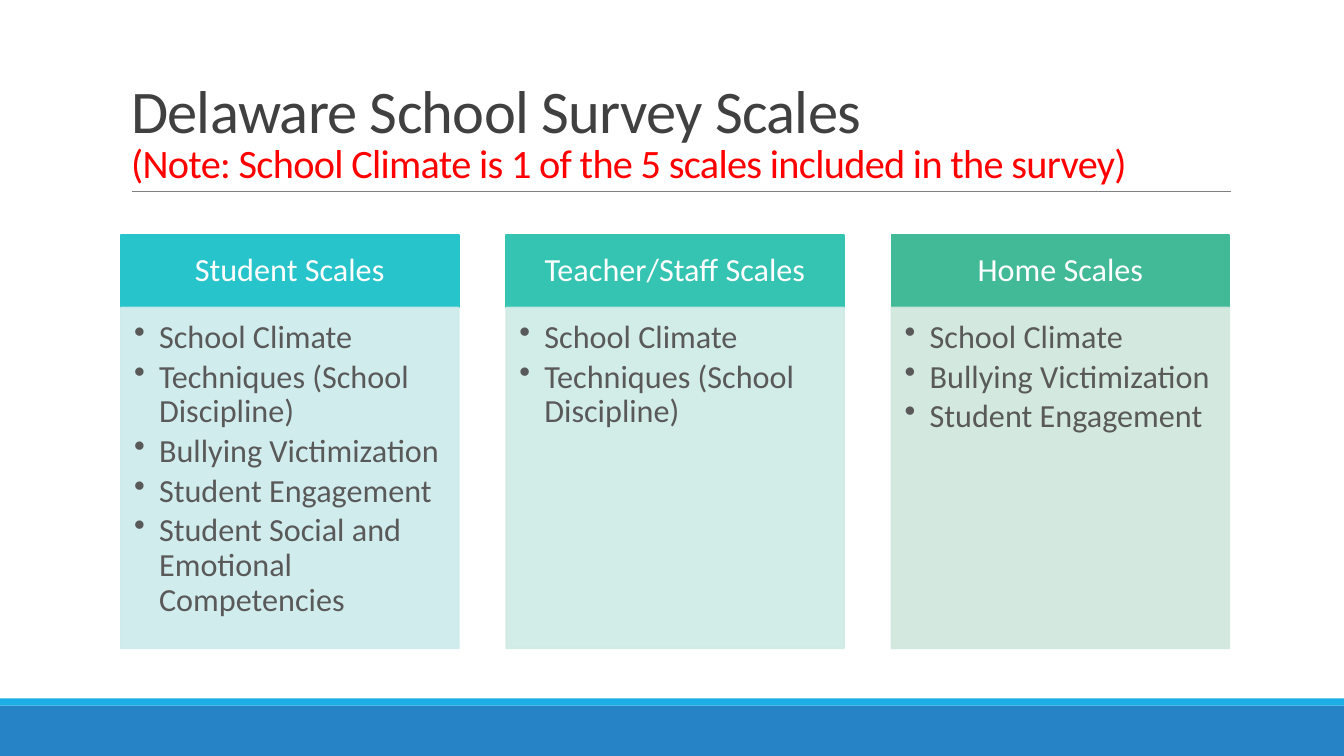
from lxml.etree import SubElement
from pptx import Presentation
from pptx.dml.color import RGBColor
from pptx.enum.shapes import MSO_CONNECTOR as CONN, MSO_SHAPE as SHAPE
from pptx.enum.text import MSO_ANCHOR as ANCHOR, MSO_AUTO_SIZE as FIT, PP_ALIGN as ALIGN
from pptx.oxml.ns import qn
from pptx.util import Cm, Pt

WHITE = RGBColor(0xFF, 0xFF, 0xFF)
DARK = RGBColor(0x40, 0x40, 0x40)
GREY = RGBColor(0x59, 0x59, 0x59)
RULE = RGBColor(0x80, 0x80, 0x80)
RED = RGBColor(0xFF, 0x00, 0x00)
BLUE = RGBColor(0x26, 0x83, 0xC6)
SKY = RGBColor(0x1C, 0xAD, 0xE4)
COLUMNS = [
    ("Student Scales", RGBColor(0x28, 0xC4, 0xCC), RGBColor(0xCD, 0xEA, 0xEC),
     ["School Climate", "Techniques (School Discipline)", "Bullying Victimization",
      "Student Engagement", "Student Social and Emotional Competencies"]),
    ("Teacher/Staff Scales", RGBColor(0x35, 0xC3, 0xB2), RGBColor(0xCE, 0xEA, 0xE5),
     ["School Climate", "Techniques (School Discipline)"]),
    ("Home Scales", RGBColor(0x42, 0xBA, 0x97), RGBColor(0xCF, 0xE7, 0xDD),
     ["School Climate", "Bullying Victimization", "Student Engagement"]),
]


def add_text(p, text, size=23, color=GREY, align=ALIGN.LEFT, leading=0.9, after=0,
             spacing=None, bullet=False):
    p.alignment, p.line_spacing, p.space_after = align, leading, Pt(after)
    r = p.add_run()
    r.text = text
    r.font.name, r.font.size = "Calibri", Pt(size)
    r.font.color.rgb = color
    if spacing is not None:
        r.font._element.set("spc", str(int(spacing * 100)))
    if bullet:
        pPr = p._p.get_or_add_pPr()
        pPr.set("marL", str(Cm(0.63)))
        pPr.set("indent", str(-Cm(0.63)))
        SubElement(pPr, qn("a:buChar")).set("char", "•")


def add_box(left, top, width, height, color, insets=(0, 0, 0, 0), anchor=ANCHOR.TOP,
            outline=True, alpha=None):
    sp = s.shapes.add_shape(SHAPE.RECTANGLE, Cm(left), Cm(top), Cm(width), Cm(height))
    sp.shadow.inherit = False
    sp.fill.solid()
    sp.fill.fore_color.rgb = color
    if outline:
        sp.line.color.rgb = color
        sp.line.width = Pt(1.25)
    else:
        sp.line.fill.background()
    if alpha:
        for clr in sp._element.spPr.iter(qn("a:srgbClr")):
            SubElement(clr, qn("a:alpha")).set("val", str(alpha * 1000))
    tf = sp.text_frame
    tf.word_wrap, tf.vertical_anchor = True, anchor
    tf.margin_left, tf.margin_top, tf.margin_right, tf.margin_bottom = map(Cm, insets)
    return tf


prs = Presentation()
prs.slide_width, prs.slide_height = Cm(33.87), Cm(19.05)
s = prs.slides.add_slide(prs.slide_layouts[5])

add_box(0, 17.78, 33.87, 1.27, BLUE, outline=False)
add_box(0, 17.6, 33.87, 0.18, SKY, outline=False)
rule = s.shapes.add_connector(CONN.STRAIGHT, Cm(3.33), Cm(4.83), Cm(31.01), Cm(4.83))
rule.line.color.rgb = RULE
rule.line.width = Pt(0.5)
SubElement(rule._element.spPr, qn("a:effectLst"))

title = s.shapes.title
title.left, title.top, title.width, title.height = Cm(3.05), Cm(0.79), Cm(27.94), Cm(4.04)
tf = title.text_frame
tf.auto_size, tf.word_wrap, tf.vertical_anchor = FIT.NONE, True, ANCHOR.BOTTOM
p = tf.paragraphs[0]
add_text(p, "Delaware School Survey Scales", size=43.2, color=DARK, leading=0.85, spacing=-0.5)
p.add_line_break()
add_text(p, "(Note: School Climate is 1 of the 5 scales included in the survey)",
         size=28.8, color=RED, leading=0.85, spacing=-0.5)

for i, (heading, strong, pale, scales) in enumerate(COLUMNS):
    left = 3.05 + i * 9.71
    tf = add_box(left, 5.92, 8.51, 1.83, strong, (0.46, 0.25, 0.46, 0.25), ANCHOR.MIDDLE)
    add_text(tf.paragraphs[0], heading, color=WHITE, align=ALIGN.CENTER)
    tf = add_box(left, 7.75, 8.51, 8.59, pale, (0.33, 0.33, 0.46, 0.51), alpha=90)
    for j, scale in enumerate(scales):
        p = tf.add_paragraph() if j else tf.paragraphs[0]
        add_text(p, scale, after=3.45, bullet=True)

prs.save("out.pptx")
